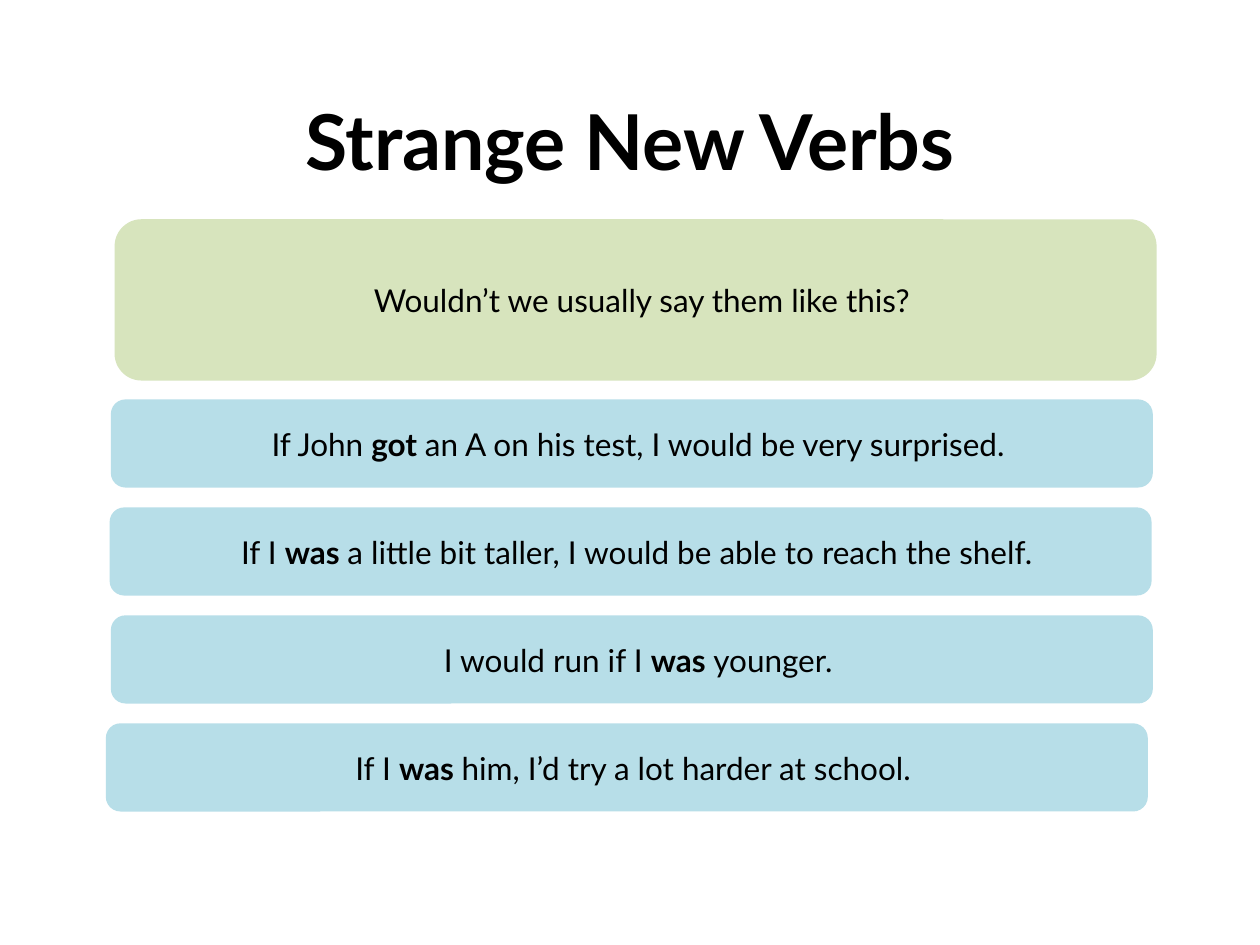
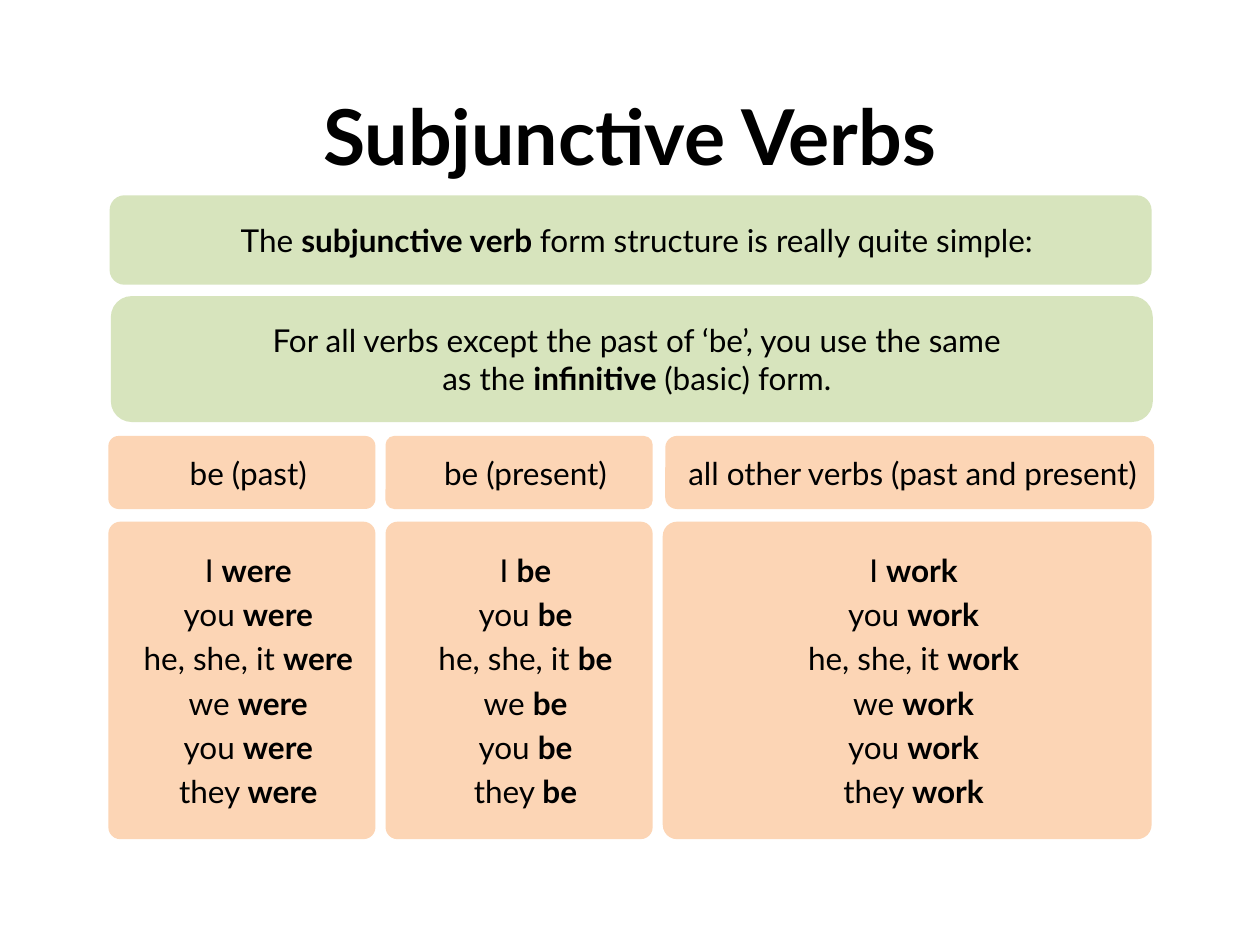
from pptx import Presentation
from pptx.dml.color import RGBColor
from pptx.enum.shapes import MSO_SHAPE
from pptx.enum.text import MSO_ANCHOR, PP_ALIGN
from pptx.util import Inches, Pt

ROUNDED = MSO_SHAPE.ROUNDED_RECTANGLE
MIDDLE = MSO_ANCHOR.MIDDLE
CENTER = PP_ALIGN.CENTER

COLORS = {"text": "000000", "green": "D7E4BD", "blue": "B7DEE8", "orange": "FCD5B5"}
FONT = "Lato"
TITLE_SIZE, BODY_SIZE = 44, 18
SLIDE_WIDTH, SLIDE_HEIGHT = 10, 7.5
CARD_WIDTH = 8.27
CARD_INSETS = (0.2, 0.1)
DEFAULT_CORNER = 0.1667

QUESTION = "Wouldn’t we usually say them like this?"
EXAMPLES = [
    (0.88, "If John **got **an A on his test, I would be very surprised."),
    (0.87, "If I **was **a little bit taller, I would be able to reach the shelf."),
    (0.88, "I would run if I **was **younger."),
    (0.84, "If I **was **him, I’d try a lot harder at school."),
]
EXAMPLE_TOP, EXAMPLE_HEIGHT, EXAMPLE_STEP = 3.17, 0.7, 0.857

STRUCTURE = "The **subjunctive verb **form structure is really quite simple:"
RULE = ("For all verbs except the past of ‘be’, you use the same as "
        "the **infinitive **(basic) form.")
PRONOUNS = ["I", "you", "he, she, it", "we", "you", "they"]
VERB_COLUMNS = [
    {"heading": "be (past)", "verb": "were", "left": 0.86, "heading_left": 0.86,
     "width": 2.12, "corner": 0.14, "insets": CARD_INSETS},
    {"heading": "be (present)", "verb": "be", "left": 3.06, "heading_left": 3.06,
     "width": 2.12, "corner": 0.12, "insets": CARD_INSETS},
    {"heading": "all other verbs (past and present)", "verb": "work", "left": 5.26,
     "heading_left": 5.28, "width": 3.88, "corner": 0.16, "insets": (0.1, 0.05)},
]
HEADING_TOP, HEADING_HEIGHT = 3.46, 0.58
FORMS_TOP, FORMS_HEIGHT, FORMS_CORNER = 4.14, 2.52, 0.045


def write_lines(shape, lines, size, insets):
    frame = shape.text_frame
    frame.word_wrap = True
    frame.vertical_anchor = MIDDLE
    frame.margin_left, frame.margin_right = map(Inches, insets)
    for index, line in enumerate(lines):
        paragraph = frame.add_paragraph() if index else frame.paragraphs[0]
        paragraph.alignment = CENTER
        if index:
            paragraph.space_before = Pt(size * 0.2)
        paragraph.font.name = FONT
        paragraph.font.size = Pt(size)
        paragraph.font.color.rgb = RGBColor.from_string(COLORS["text"])
        for position, part in enumerate(line.split("**")):
            if part:
                run = paragraph.add_run()
                run.text = part
                run.font.bold = position % 2 == 1


def add_card(slide, box, color, lines, corner=DEFAULT_CORNER, insets=CARD_INSETS):
    card = slide.shapes.add_shape(ROUNDED, *map(Inches, box))
    card.adjustments[0] = corner
    card.shadow.inherit = False
    card.fill.solid()
    card.fill.fore_color.rgb = RGBColor.from_string(COLORS[color])
    card.line.fill.background()
    write_lines(card, lines, BODY_SIZE, insets)


def add_titled_slide(presentation, title, top):
    slide = presentation.slides.add_slide(presentation.slide_layouts[6])
    box = slide.shapes.add_textbox(*map(Inches, (0.5, top, SLIDE_WIDTH - 1, 1.25)))
    write_lines(box, [f"**{title}**"], TITLE_SIZE, (0.1, 0.1))
    return slide


def build_examples(presentation):
    slide = add_titled_slide(presentation, "Strange New Verbs", 0.48)
    add_card(slide, (0.91, 1.74, CARD_WIDTH, 1.28), "green", [QUESTION])
    for row, (left, sentence) in enumerate(EXAMPLES):
        top = EXAMPLE_TOP + row * EXAMPLE_STEP
        add_card(slide, (left, top, CARD_WIDTH, EXAMPLE_HEIGHT), "blue", [sentence])


def build_verb_forms(presentation):
    slide = add_titled_slide(presentation, "Subjunctive Verbs", 0.44)
    add_card(slide, (0.87, 1.55, CARD_WIDTH, 0.71), "green", [STRUCTURE])
    add_card(slide, (0.88, 2.35, CARD_WIDTH, 1), "green", [RULE], insets=(1.12, 1.04))
    for column in VERB_COLUMNS:
        add_card(slide, (column["heading_left"], HEADING_TOP, column["width"], HEADING_HEIGHT),
                 "orange", [column["heading"]], column["corner"], column["insets"])
        forms = [f"{pronoun} **{column['verb']}**" for pronoun in PRONOUNS]
        add_card(slide, (column["left"], FORMS_TOP, column["width"], FORMS_HEIGHT),
                 "orange", forms, FORMS_CORNER)


def main():
    presentation = Presentation()
    presentation.slide_width = Inches(SLIDE_WIDTH)
    presentation.slide_height = Inches(SLIDE_HEIGHT)
    build_examples(presentation)
    build_verb_forms(presentation)
    presentation.save("out.pptx")


if __name__ == "__main__":
    main()
